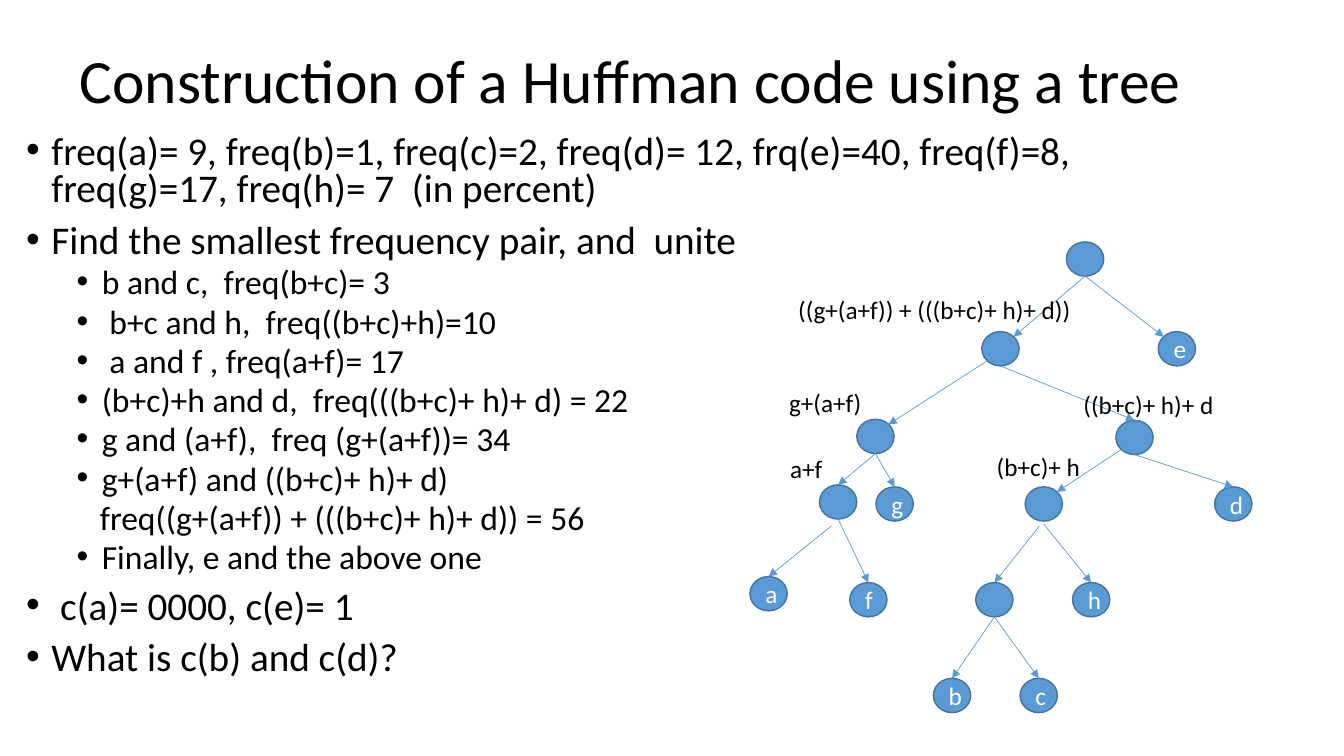
import dataclasses
import pptx
import pptx.dml.color
import pptx.enum.shapes
import pptx.enum.text
import pptx.oxml
import pptx.oxml.ns
import pptx.util

CELL = pptx.util.Inches(0.1)  # the slide is a grid of tenth-inch cells
COLUMNS, ROWS = 133.33, 75
NODE_WIDTH, NODE_HEIGHT = 3.7, 3.4


@dataclasses.dataclass(frozen=True)
class Theme:
    font: str = "Calibri"
    text: str = "000000"
    node_text: str = "FFFFFF"
    node: str = "5B9BD5"
    node_line: str = "43739E"
    title_size: int = 44
    item_size: int = 28
    detail_size: int = 24
    tree_size: int = 18
    node_line_width: float = 1
    edge_width: float = 0.5


THEME = Theme()

# Region boxes: left column, top row, columns, rows
TITLE_BOX = (5.5, 1, 115, 14.5)
STEPS_BOX = (1.6, 12.9, 115, 59.4)
TREE_BOX = (74, 24, 50.2, 46.7)

# Kind of line: size, space before, left margin and first-line indent in inches
STEP_STYLES = {
    "item": (THEME.item_size, 10, 0.25, -0.25),
    "detail": (THEME.detail_size, 5, 0.75, -0.25),
    "continued": (THEME.detail_size, 5, 0.73, 0),
}
STEPS = [
    ("item", "freq(a)= 9, freq(b)=1, freq(c)=2, freq(d)= 12, frq(e)=40, "
             "freq(f)=8, freq(g)=17, freq(h)= 7  (in percent)"),
    ("item", "Find the smallest frequency pair, and  unite"),
    ("detail", "b and c,  freq(b+c)= 3"),
    ("detail", " b+c and h,  freq((b+c)+h)=10"),
    ("detail", " a and f , freq(a+f)= 17"),
    ("detail", "(b+c)+h and d,  freq(((b+c)+ h)+ d) = 22"),
    ("detail", "g and (a+f),  freq (g+(a+f))= 34"),
    ("detail", "g+(a+f) and ((b+c)+ h)+ d)"),
    ("continued", "freq((g+(a+f)) + (((b+c)+ h)+ d)) = 56"),
    ("detail", "Finally, e and the above one"),
    ("item", " c(a)= 0000, c(e)= 1"),
    ("item", "What is c(b) and c(d)?"),
]

# Node corners in cells of the tree box; one-letter names are leaves
NODES = {
    "root": (31.8, 0),
    "gaf+bchd": (23.4, 8.9), "e": (40.9, 8.9),
    "gaf": (11, 17.6), "bchd": (36.7, 17.7),
    "af": (7.3, 24.1), "g": (12.9, 24.3), "bch": (27.7, 24.3), "d": (46.5, 24.3),
    "a": (0.4, 33.2), "f": (10.3, 33.8), "bc": (22.8, 33.8), "h": (32.4, 33.8),
    "b": (18.6, 43.3), "c": (27.2, 43.3),
}

# Points on a node as shares of its width and height
TOP, BOTTOM = (0.5, 0), (0.5, 1)
UPPER_LEFT, UPPER_RIGHT, LOWER_LEFT = (0.15, 0.15), (0.85, 0.15), (0.15, 0.85)
EDGES = [
    ("root", BOTTOM, "gaf+bchd", UPPER_RIGHT),
    ("root", BOTTOM, "e", UPPER_LEFT),
    ("gaf+bchd", LOWER_LEFT, "gaf", UPPER_RIGHT),
    ("gaf+bchd", BOTTOM, "bchd", TOP),
    ("gaf", BOTTOM, "af", TOP),
    ("gaf", BOTTOM, "g", TOP),
    ("bchd", LOWER_LEFT, "bch", UPPER_RIGHT),
    ("bchd", BOTTOM, "d", TOP),
    ("af", (0.32, 1.2), "a", TOP),
    ("af", BOTTOM, "f", TOP),
    ("bch", (0.38, 1.15), "bc", TOP),
    ("bch", (0.5, 1.09), "h", TOP),
    ("bc", BOTTOM, "b", TOP),
    ("bc", BOTTOM, "c", TOP),
]
LABEL_HEIGHT = 4
LABELS = [  # text, left, top, width in cells of the tree box
    ("((g+(a+f)) + (((b+c)+ h)+ d))", 4.2, 4.7, 29.5),
    ("((b+c)+ h)+ d", 32.5, 14.1, 15.1),
    ("g+(a+f)", 3.3, 13.9, 9.3),
    ("a+f", 3.4, 20.5, 5.3),
    ("(b+c)+ h", 23.9, 20.3, 10.4),
]


def cells(*counts):
    return [round(count * CELL) for count in counts]


def color(code):
    return pptx.dml.color.RGBColor.from_string(code)


def apply(target, values):
    for name, value in values.items():
        setattr(target, name, value)


def add_span(para, text, size, code=THEME.text):
    span = para.add_run()
    span.text = text
    apply(span.font, {"name": THEME.font, "size": pptx.util.Pt(size)})
    span.font.color.rgb = color(code)


def add_xml(parent, tag, **attributes):
    child = pptx.oxml.parse_xml(f"<a:{tag} {pptx.oxml.ns.nsdecls('a')}/>")
    apply_attributes(child, attributes)
    parent.append(child)


def apply_attributes(element, attributes):
    for name, value in attributes.items():
        element.set(name, str(value))


def place(shape, box):
    apply(shape, dict(zip(("left", "top", "width", "height"), cells(*box))))


def fill_title(title, box):
    place(title, box)
    apply(title.text_frame, {
        "vertical_anchor": pptx.enum.text.MSO_ANCHOR.MIDDLE,
        "auto_size": pptx.enum.text.MSO_AUTO_SIZE.NONE,
    })
    para = title.text_frame.paragraphs[0]
    apply(para, {"alignment": pptx.enum.text.PP_ALIGN.LEFT, "line_spacing": 0.9})
    add_span(para, " Construction of a Huffman code using a tree", THEME.title_size)


def fill_steps(body, box):
    place(body, box)
    frame = body.text_frame
    frame.auto_size = pptx.enum.text.MSO_AUTO_SIZE.NONE
    for index, (kind, text) in enumerate(STEPS):
        size, before, margin, indent = STEP_STYLES[kind]
        para = frame.add_paragraph() if index else frame.paragraphs[0]
        apply(para, {"level": int(kind != "item"), "line_spacing": 0.8,
                     "space_before": pptx.util.Pt(before)})
        add_span(para, text, size)
        properties = para._p.get_or_add_pPr()
        apply_attributes(properties, {"marL": pptx.util.Inches(margin),
                                      "indent": pptx.util.Inches(indent)})
        if kind == "continued":
            add_xml(properties, "buNone")
        else:
            add_xml(properties, "buFont", typeface="Arial")
            add_xml(properties, "buChar", char="•")


def add_node(page, name, left, top):
    node = page.shapes.add_shape(pptx.enum.shapes.MSO_SHAPE.OVAL,
                                 *cells(left, top, NODE_WIDTH, NODE_HEIGHT))
    node.shadow.inherit = False
    node.fill.solid()
    node.fill.fore_color.rgb = color(THEME.node)
    node.line.color.rgb = color(THEME.node_line)
    node.line.width = pptx.util.Pt(THEME.node_line_width)
    if len(name) == 1:
        node.text_frame.vertical_anchor = pptx.enum.text.MSO_ANCHOR.MIDDLE
        para = node.text_frame.paragraphs[0]
        para.alignment = pptx.enum.text.PP_ALIGN.CENTER
        add_span(para, name, THEME.tree_size, THEME.node_text)
    return node


def add_edge(page, parent, start, child, end):
    points = [round(value) for node, (across, down) in ((parent, start), (child, end))
              for value in (node.left + across * node.width, node.top + down * node.height)]
    edge = page.shapes.add_connector(pptx.enum.shapes.MSO_CONNECTOR.STRAIGHT, *points)
    if end == TOP:
        edge.end_connect(child, 0)
    edge.line.color.rgb = color(THEME.node)
    edge.line.width = pptx.util.Pt(THEME.edge_width)
    add_xml(edge.line._get_or_add_ln(), "tailEnd", type="triangle")
    add_xml(edge._element.spPr, "effectLst")


def draw_tree(page, box):
    left, top = box[:2]
    nodes = {name: add_node(page, name, left + column, top + row)
             for name, (column, row) in NODES.items()}
    for parent, start, child, end in EDGES:
        add_edge(page, nodes[parent], start, nodes[child], end)
    for text, column, row, width in LABELS:
        label = page.shapes.add_textbox(*cells(left + column, top + row, width, LABEL_HEIGHT))
        apply(label.text_frame, {"word_wrap": False,
                                 "auto_size": pptx.enum.text.MSO_AUTO_SIZE.SHAPE_TO_FIT_TEXT})
        add_span(label.text_frame.paragraphs[0], text, THEME.tree_size)


def main():
    deck = pptx.Presentation()
    apply(deck, dict(zip(("slide_width", "slide_height"), cells(COLUMNS, ROWS))))
    page = deck.slides.add_slide(deck.slide_layouts[1])
    fill_title(page.shapes.title, TITLE_BOX)
    fill_steps(page.placeholders[1], STEPS_BOX)
    draw_tree(page, TREE_BOX)
    deck.save("out.pptx")


if __name__ == "__main__":
    main()
